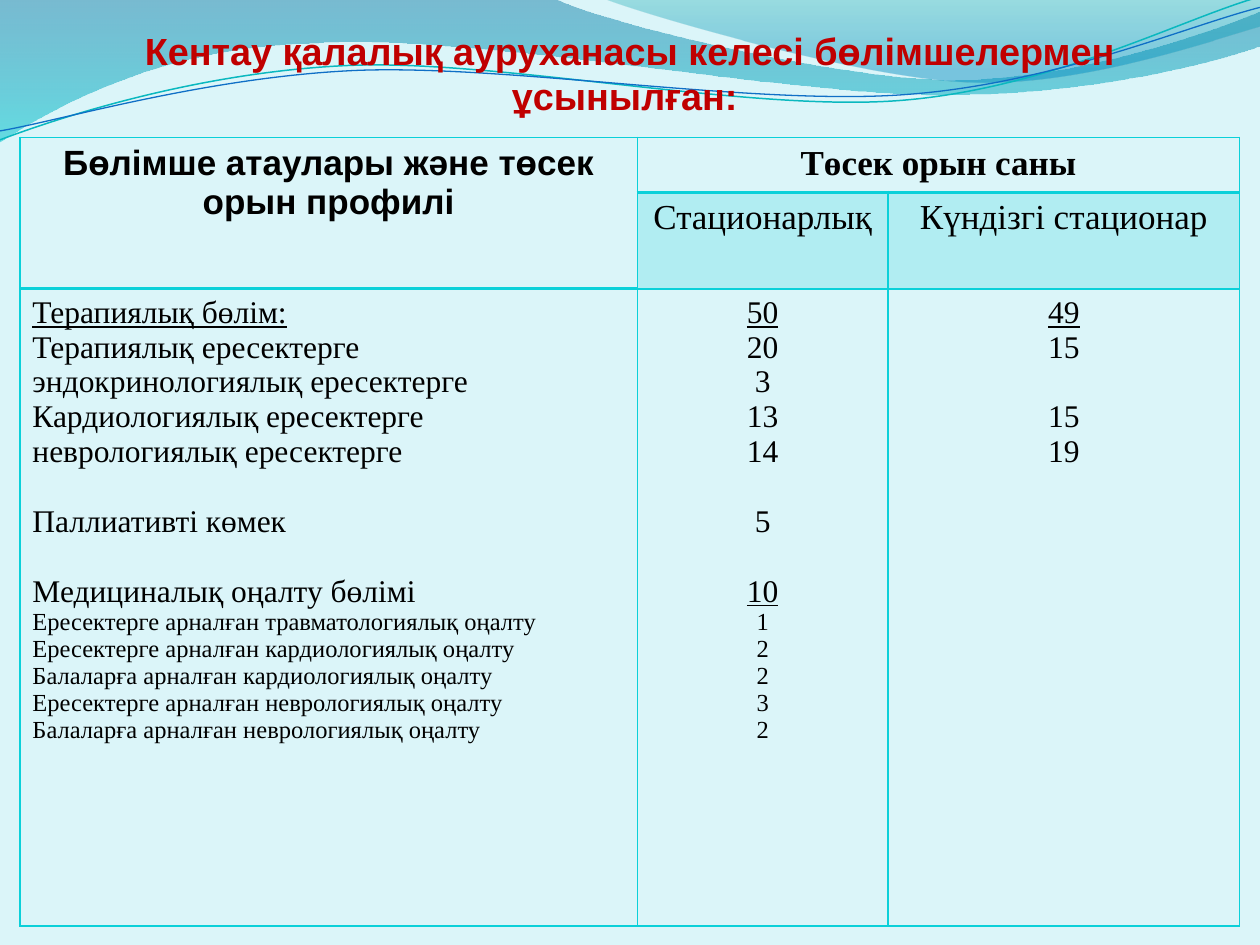
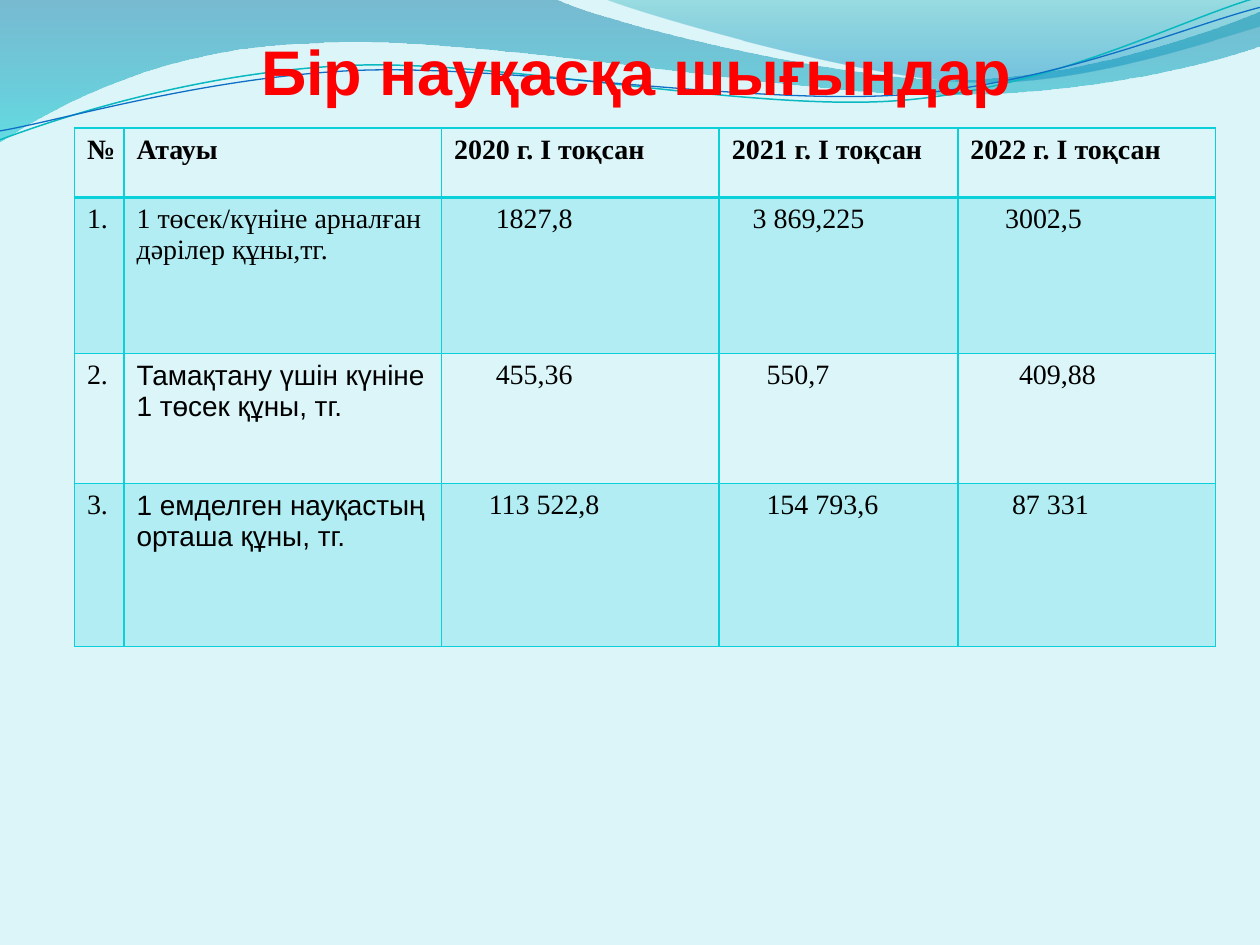
import pptx
import pptx.util
import pptx.dml.color
import pptx.enum.text
import pptx.oxml
import pptx.oxml.ns

Cm, Pt = pptx.util.Cm, pptx.util.Pt
RGB = pptx.dml.color.RGBColor
ALIGN = pptx.enum.text.PP_ALIGN
ANCHOR = pptx.enum.text.MSO_ANCHOR
NS = pptx.oxml.ns.nsdecls("a")

PALE = RGB(0xDB, 0xF5, 0xF9)
AQUA = RGB(0x0B, 0xD0, 0xD9)
BLACK = RGB(0, 0, 0)
RED = RGB(0xFF, 0, 0)
DARK_RED = RGB(0xC0, 0, 0)
BLUE = RGB(0x00, 0x74, 0xA1)
CYAN = RGB(0x00, 0xC6, 0xCF)
GREEN = RGB(0x00, 0xA1, 0xA9)
SKY = RGB(0x00, 0x8B, 0xBF)
TEAL = RGB(0x0A, 0xB8, 0xBF)
NAVY = RGB(0x0F, 0x6F, 0xC6)
SANS, SERIF = "Arial", "Times New Roman"

# Points in cm: a pair is a straight step, six numbers are a Bezier step.
BAND = [(0, 0), (11.18, -0.03),
        (12.09, 0.43, 16.87, 1.6, 19.25, 1.6),
        (21.67, 1.6, 24.33, 0.66, 25.4, 0.23), (25.43, 0.91),
        (24.97, 1.12, 22.1, 1.93, 18.95, 1.91),
        (15.8, 1.91, 9.7, 0.71, 6.53, 0.86),
        (3.28, 0.91, 1.17, 2.11, -0.03, 2.87)]
CREST = [(12.17, -0.03),
         (12.93, 0.28, 17.32, 1.57, 19.53, 1.65),
         (21.74, 1.75, 24.41, 0.81, 25.4, 0.53), (25.4, 0)]
UPPER = [(0, 2.82),
         (1.22, 2.36, 4.01, 1.45, 7.04, 1.32),
         (10.03, 1.19, 15.06, 2.26, 18.11, 2.03),
         (21.16, 1.8, 23.83, 0.38, 25.35, -0.05)]
LOWER = [(0, 2.64),
         (1.19, 2.44, 4.17, 1.55, 7.19, 1.42),
         (10.24, 1.3, 15.16, 2.13, 18.21, 1.91),
         (21.23, 1.7, 23.9, 0.53, 25.4, 0.15)]
# Outline, gradient stops (place, colour, opacity %), line colour and width
WAVES = [(BAND, [(0, BLUE, 45), (1, CYAN, 55)], None, 0),
         (CREST, [(0, GREEN, 30), (0.8, SKY, 45)], None, 0),
         (UPPER, None, TEAL, 0.85),
         (LOWER, None, NAVY, 0.75)]

# Title, colour, size and box (left, top, width, height) in cm
HEADS = [("Кентау қалалық ауруханасы келесі бөлімшелермен ұсынылған: \n",
          DARK_RED, 21.6, (1.27, 0.91, 22.86, 2.39)),
         ("Бір науқасқа шығындар", RED, 36, (1.4, 0.41, 22.86, 1.78))]

CARE = [("Терапиялық бөлім:", "50", "49"),
        ("Терапиялық ересектерге", "20", "15"),
        ("эндокринологиялық ересектерге", "3", ""),
        ("Кардиологиялық ересектерге", "13", "15"),
        ("неврологиялық ересектерге", "14", "19"),
        ("", "", ""),
        ("Паллиативті көмек", "5", ""),
        ("", "", ""),
        ("Медициналық оңалту бөлімі", "10", ""),
        ("Ересектерге арналған травматологиялық оңалту", "1", ""),
        ("Ересектерге арналған кардиологиялық оңалту", "2", ""),
        ("Балаларға арналған кардиологиялық оңалту", "2", ""),
        ("Ересектерге арналған неврологиялық оңалту", "3", ""),
        ("Балаларға арналған неврологиялық оңалту", "2", "")]
TOTALS = ("Терапиялық бөлім:", "50", "49", "10")
SMALL = 9  # first row of the small print
LINE = 19.9  # height of an 18 pt line

COSTS = [("№", "Атауы", "2020 г. I тоқсан", "2021 г. I тоқсан", "2022 г. I тоқсан"),
         ("1.", "1 төсек/күніне арналған дәрілер құны,тг.",
          "1827,8", "3 869,225", "3002,5"),
         ("2.", "Тамақтану үшін күніне 1 төсек құны, тг.",
          "455,36", "550,7", "409,88"),
         ("3.", "1 емделген науқастың орташа құны, тг.",
          "113 522,8", "154 793,6", "87 331")]
STEPS = [(0, 0, 0, 0, 0), (0, 0, 6, 3, 5), (0, 0, 6, 5, 7), (0, 0, 5, 5, 6)]
STEP = 0.14


def write(frame, text, size=18, font=SERIF, color=BLACK, bold=False,
          under=False, align=ALIGN.LEFT, before=0, indent=0):
    """Add one paragraph, using the first one while it is still empty."""
    para = frame.paragraphs[0]
    if para.runs:
        para = frame.add_paragraph()
    para.alignment = align
    para.font.size = Pt(size)
    if before:
        para.space_before = Pt(before)
    if indent:
        para._p.get_or_add_pPr().set("marL", str(Cm(indent)))
    run = para.add_run()
    run.text = text.rstrip("\n")
    run.font.size, run.font.name = Pt(size), font
    run.font.bold, run.font.underline = bold, under
    run.font.color.rgb = color
    if text.endswith("\n"):
        para.add_line_break()


def grid(slide, left, top, cols, rows, tinted):
    """Add a ruled table; tinted holds the (row, column) pairs to shade."""
    table = slide.shapes.add_table(len(rows), len(cols), Cm(left), Cm(top),
                                   Cm(sum(cols)), Cm(sum(rows))).table
    table.first_row = table.horz_banding = False
    for col, wide in zip(table.columns, cols):
        col.width = Cm(wide)
    for r, tall in enumerate(rows):
        table.rows[r].height = Cm(tall)
        for c in range(len(cols)):
            cell = table.cell(r, c)
            props = cell._tc.get_or_add_tcPr()
            for side in "LRTB":
                thick = (side, r) in (("B", 0), ("T", 1))
                props.append(pptx.oxml.parse_xml(
                    f'<a:ln{side} {NS} w="{Pt(2 if thick else 1)}"><a:solidFill>'
                    f'<a:srgbClr val="{AQUA}"/></a:solidFill></a:ln{side}>'))
            if (r, c) in tinted:
                cell.fill.solid()
                cell.fill.fore_color.rgb = AQUA
                props[-1][0].append(pptx.oxml.parse_xml(
                    f'<a:alpha {NS} val="20000"/>'))
            else:
                cell.fill.background()
    return table


deck = pptx.Presentation()
deck.slide_width, deck.slide_height = Cm(25.4), Cm(19.05)
back = deck.slide_master.background.fill
back.solid()
back.fore_color.rgb = PALE

# Waves and title of each slide
slides = []
for title, color, size, box in HEADS:
    slide = deck.slides.add_slide(deck.slide_layouts[6])
    slides.append(slide)
    for route, stops, ink, width in WAVES:
        dots = [(Cm(x), Cm(y)) for step in route
                for x, y in zip(step[::2], step[1::2])]
        pen = slide.shapes.build_freeform(*dots[0])
        pen.add_line_segments(dots[1:], close=bool(stops))
        wave = pen.convert_to_shape()
        # Each Bezier step takes three straight segments and bends them.
        legs = iter(list(wave._element.iter(pptx.oxml.ns.qn("a:lnTo"))))
        for step in route[1:]:
            leg = next(legs)
            if len(step) == 6:
                bend = pptx.oxml.parse_xml(f"<a:cubicBezTo {NS}/>")
                leg.addprevious(bend)
                for part in (leg, next(legs), next(legs)):
                    bend.append(part[0])
                    part.getparent().remove(part)
        wave.shadow.inherit = False
        if stops:
            wave.line.fill.background()
            wave.fill.gradient()
            wave.fill.gradient_angle = 270
            for stop, (place, tone, alpha) in zip(wave.fill.gradient_stops, stops):
                stop.position = place
                stop.color.rgb = tone
                stop._gs[0].append(pptx.oxml.parse_xml(
                    f'<a:alpha {NS} val="{alpha * 1000}"/>'))
        else:
            wave.fill.background()
            wave.line.color.rgb = ink
            wave.line.width = Pt(width)
    frame = slide.shapes.add_textbox(*map(Cm, box)).text_frame
    frame.word_wrap = True
    frame.vertical_anchor = ANCHOR.BOTTOM
    frame.margin_left = frame.margin_right = frame.margin_bottom = 0
    frame.margin_top = Cm(0.13)
    write(frame, title, size=size, font=SANS, color=color, bold=True,
          align=ALIGN.CENTER)

# Slide 1: beds by department
beds = grid(slides[0], 0.4, 2.77, [12.45, 5.05, 7.09], [0.97, 1.65, 12.85],
            [(1, 1), (1, 2)])
beds.cell(0, 0).merge(beds.cell(1, 0))
beds.cell(0, 1).merge(beds.cell(0, 2))
for r, c, text, font, bold in [
        (0, 0, "Бөлімше атаулары және төсек орын профилі", SANS, True),
        (0, 1, "Төсек орын саны", SERIF, True),
        (1, 1, "Стационарлық", SERIF, False),
        (1, 2, "Күндізгі стационар", SERIF, False)]:
    write(beds.cell(r, c).text_frame, text, size=20, font=font, bold=bold,
          align=ALIGN.CENTER)
for c in range(3):
    gap = 0
    for r, row in enumerate(CARE):
        if not row[c]:
            gap += LINE
            continue
        write(beds.cell(2, c).text_frame, row[c], size=14 if r >= SMALL else 18,
              under=row[c] in TOTALS, before=gap,
              align=ALIGN.CENTER if c else ALIGN.LEFT)
        gap = 0

# Slide 2: costs per patient
costs = grid(slides[1], 1.5, 2.58, [1, 6.4, 5.6, 4.81, 5.2],
             [1.4, 3.15, 2.62, 3.28], [(r, c) for r in (1, 3) for c in range(5)])
for r, row in enumerate(COSTS):
    for c, text in enumerate(row):
        write(costs.cell(r, c).text_frame, text, size=16, bold=r == 0,
              font=SANS if c == 1 and r > 1 else SERIF,
              indent=STEPS[r][c] * STEP)

deck.save("out.pptx")
